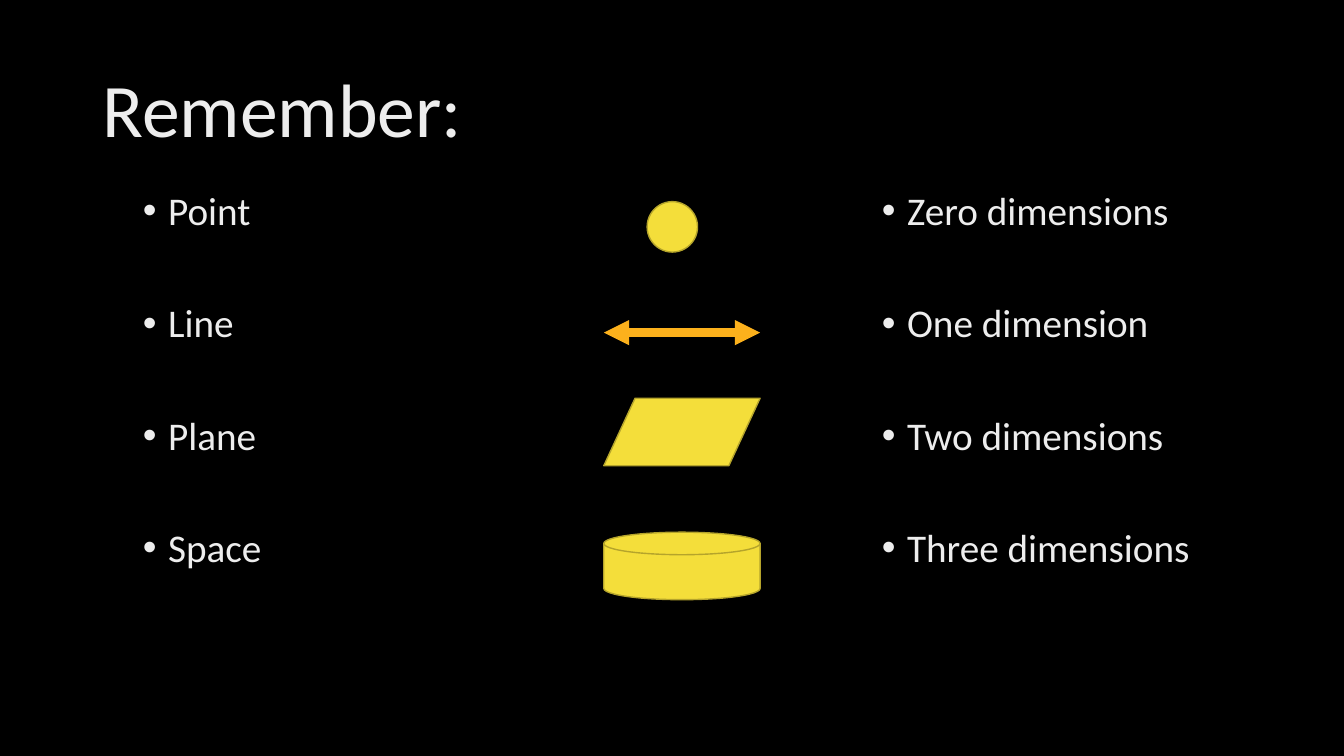
"""Build the slide that matches geometric objects with their dimensions."""
import dataclasses

import lxml.etree
import pptx
import pptx.dml.color
import pptx.enum.shapes
import pptx.enum.text
import pptx.oxml.ns
import pptx.util

SHAPES = pptx.enum.shapes.MSO_SHAPE
ANCHORS = pptx.enum.text.MSO_ANCHOR
WIDTH = pptx.util.Inches(13.33)
HEIGHT = pptx.util.Inches(7.5)
BLACK, PALE, YELLOW, OLIVE, ORANGE = "000000", "EDEDED", "F4DE3A", "B5A42B", "FCB11C"


@dataclasses.dataclass(frozen=True)
class Area:
    left: float
    top: float
    width: float
    height: float

    def box(self) -> tuple[int, int, int, int]:
        return across(self.left), down(self.top), across(self.width), down(self.height)


@dataclasses.dataclass(frozen=True)
class Figure:
    preset: SHAPES
    area: Area


@dataclasses.dataclass(frozen=True)
class Column:
    area: Area
    entries: tuple[str, ...]


FIGURE_LEFT, FIGURE_WIDTH, FIGURE_HEIGHT = 44.93, 11.63, 8.93
LINE_TOP = 44
TITLE_AREA = Area(6.9, 5.33, 86.25, 19.33)
FIGURES = (
    Figure(SHAPES.FLOWCHART_CONNECTOR, Area(48.15, 26.67, 3.75, 6.67)),
    Figure(SHAPES.FLOWCHART_DATA, Area(FIGURE_LEFT, 52.67, FIGURE_WIDTH, FIGURE_HEIGHT)),
    Figure(SHAPES.FLOWCHART_MAGNETIC_DISK, Area(FIGURE_LEFT, 70.4, FIGURE_WIDTH, FIGURE_HEIGHT)),
)
COLUMNS = (
    Column(Area(9.9, 24.67, 28.5, 63.47), ("Point", "Line", "Plane", "Space")),
    Column(
        Area(64.88, 24.67, 28.5, 63.47),
        ("Zero dimensions", "One dimension", "Two dimensions", "Three dimensions"),
    ),
)


def across(percent: float) -> int:
    return round(WIDTH * percent / 100)


def down(percent: float) -> int:
    return round(HEIGHT * percent / 100)


def paint(colour_format, colour: str) -> None:
    colour_format.rgb = pptx.dml.color.RGBColor.from_string(colour)


def add_child(parent, tag: str, **attributes: str):
    return lxml.etree.SubElement(parent, pptx.oxml.ns.qn(tag), attributes)


def add_bullet(paragraph) -> None:
    properties = paragraph._p.get_or_add_pPr()
    indent = pptx.util.Inches(0.25)
    properties.set("marL", str(indent))
    properties.set("indent", str(-indent))
    add_child(properties, "a:buFont", typeface="Arial")
    add_child(properties, "a:buChar", char="•")


def add_text(slide, area: Area, lines: tuple[str, ...], *, size: float, gap: float = 0,
             bulleted: bool = False, anchor: ANCHORS = ANCHORS.TOP) -> None:
    frame = slide.shapes.add_textbox(*area.box()).text_frame
    frame.word_wrap = True
    frame.vertical_anchor = anchor
    for index, line in enumerate(lines):
        paragraph = frame.add_paragraph() if index else frame.paragraphs[0]
        if bulleted:
            add_bullet(paragraph)
        paragraph.line_spacing = 0.9
        if index:
            paragraph.space_before = pptx.util.Pt(gap)
        run = paragraph.add_run()
        run.text = line
        run.font.name = "Calibri"
        run.font.size = pptx.util.Pt(size)
        paint(run.font.color, PALE)


def add_figure(slide, figure: Figure) -> None:
    solid = slide.shapes.add_shape(figure.preset, *figure.area.box())
    solid.shadow.inherit = False
    solid.fill.solid()
    paint(solid.fill.fore_color, YELLOW)
    paint(solid.line.color, OLIVE)
    solid.line.width = pptx.util.Pt(1)


def add_double_arrow(slide) -> None:
    arrow = slide.shapes.add_connector(
        pptx.enum.shapes.MSO_CONNECTOR.STRAIGHT,
        across(FIGURE_LEFT), down(LINE_TOP), across(FIGURE_LEFT + FIGURE_WIDTH), down(LINE_TOP),
    )
    paint(arrow.line.color, ORANGE)
    arrow.line.width = pptx.util.Pt(6)
    outline = arrow.line._get_or_add_ln()
    for end in ("a:headEnd", "a:tailEnd"):
        add_child(outline, end, type="triangle")
    add_child(arrow._element.spPr, "a:effectLst")


def main() -> None:
    deck = pptx.Presentation()
    deck.slide_width, deck.slide_height = WIDTH, HEIGHT
    slide = deck.slides.add_slide(deck.slide_layouts[6])
    slide.background.fill.solid()
    paint(slide.background.fill.fore_color, BLACK)
    add_text(slide, TITLE_AREA, ("Remember:",), size=54, anchor=ANCHORS.MIDDLE)
    for column in COLUMNS:
        add_text(slide, column.area, column.entries, size=28, gap=50, bulleted=True)
    for figure in FIGURES:
        add_figure(slide, figure)
    add_double_arrow(slide)
    deck.save("out.pptx")


if __name__ == "__main__":
    main()
